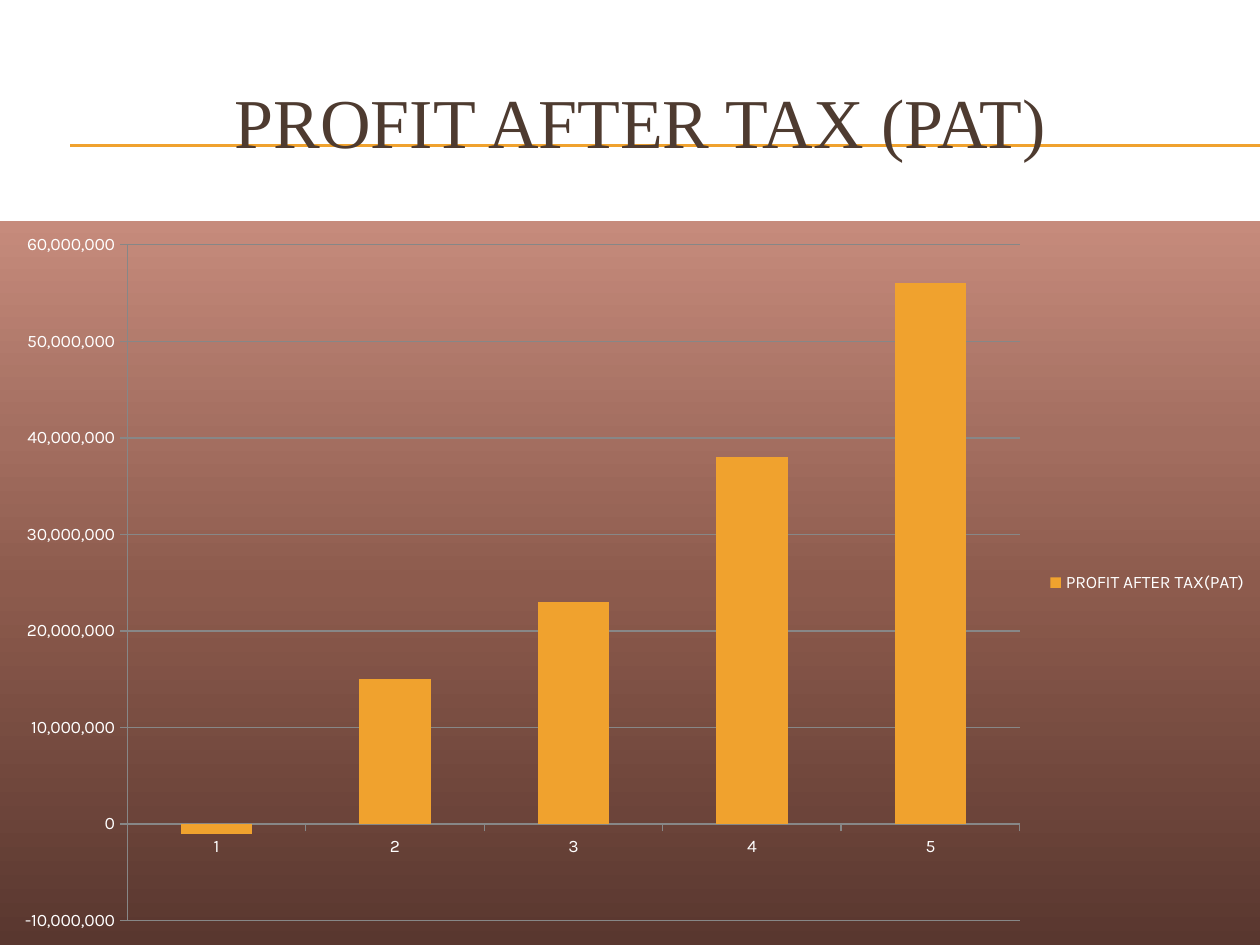
from lxml import etree
from pptx import Presentation
from pptx.chart.data import CategoryChartData
from pptx.dml.color import RGBColor
from pptx.enum.chart import XL_CHART_TYPE as ChartType
from pptx.enum.chart import XL_LEGEND_POSITION as LegendPosition
from pptx.enum.chart import XL_TICK_MARK as TickMark
from pptx.enum.shapes import MSO_CONNECTOR as Connector
from pptx.enum.text import MSO_ANCHOR as Anchor
from pptx.enum.text import PP_ALIGN as Align
from pptx.oxml import parse_xml
from pptx.oxml.ns import qn
from pptx.util import Pt

GOLD = RGBColor(0xF0, 0xA2, 0x2E)
BROWN = RGBColor(0x4E, 0x3B, 0x30)
WHITE = RGBColor(0xFF, 0xFF, 0xFF)
GRAY = RGBColor(0x87, 0x87, 0x87)
# Position in percent and colour, from the bottom of the chart to its top
GRADIENT = [
    (0, RGBColor(0x59, 0x37, 0x2F)),
    (50, RGBColor(0x8D, 0x5B, 0x4D)),
    (70, RGBColor(0xA3, 0x6E, 0x60)),
    (100, RGBColor(0xC6, 0x8B, 0x7C)),
]
SLIDE_WIDTH, SLIDE_HEIGHT = 720, 540


def apply_format(target, values):
    for name, value in values.items():
        setattr(target, name, value)


class SlideBuilder:
    title_font = {"name": "Times New Roman", "size": Pt(40)}
    chart_font = {"name": "Karla", "size": Pt(10)}

    def __init__(self, slide):
        self.slide = slide

    def rule(self, left, right, top):
        line = self.slide.shapes.add_connector(
            Connector.STRAIGHT, Pt(left), Pt(top), Pt(right), Pt(top))
        line.line.color.rgb = GOLD
        line.line.width = Pt(0.75)
        etree.SubElement(line._element.spPr, qn("a:effectLst"))

    def title(self, text, left, top, width, height):
        box = self.slide.shapes.add_textbox(
            Pt(left), Pt(top), Pt(width), Pt(height))
        apply_format(box.text_frame, {
            "word_wrap": True, "vertical_anchor": Anchor.MIDDLE})
        paragraph = box.text_frame.paragraphs[0]
        paragraph.alignment = Align.CENTER
        run = paragraph.add_run()
        run.text = text
        apply_format(run.font, self.title_font)
        run.font.color.rgb = BROWN

    def column_chart(self, name, values, left, top, width, height):
        data = CategoryChartData(number_format="#,##0")
        data.categories = [str(i) for i in range(1, len(values) + 1)]
        data.add_series(name, values)
        chart = self.slide.shapes.add_chart(
            ChartType.COLUMN_CLUSTERED, Pt(left), Pt(top), Pt(width),
            Pt(height), data).chart
        apply_format(chart, {"has_title": False, "has_legend": True})
        apply_format(chart.font, self.chart_font)
        chart.font.color.rgb = WHITE
        apply_format(chart.legend, {
            "position": LegendPosition.RIGHT, "include_in_layout": False})

        # Columns
        plot = chart.plots[0]
        apply_format(plot, {"gap_width": 150, "vary_by_categories": False})
        series = plot.series[0]
        series.invert_if_negative = False
        series.format.fill.solid()
        series.format.fill.fore_color.rgb = GOLD

        # Axes and gridlines
        value_axis = chart.value_axis
        apply_format(value_axis, {
            "minimum_scale": -10_000_000, "maximum_scale": 60_000_000,
            "major_unit": 10_000_000, "has_major_gridlines": True})
        apply_format(value_axis.tick_labels, {
            "number_format": "#,##0", "number_format_is_linked": False})
        for axis in (chart.category_axis, value_axis):
            axis.major_tick_mark = TickMark.OUTSIDE
            axis.format.line.color.rgb = GRAY
        value_axis.major_gridlines.format.line.color.rgb = GRAY
        self.gradient_background(chart)

    def gradient_background(self, chart):
        stops = "".join(
            f'<a:gs pos="{position * 1000}"><a:srgbClr val="{color}"/></a:gs>'
            for position, color in GRADIENT)
        properties = parse_xml(
            '<c:spPr'
            ' xmlns:c="http://schemas.openxmlformats.org/drawingml/2006/chart"'
            ' xmlns:a="http://schemas.openxmlformats.org/drawingml/2006/main">'
            f'<a:gradFill><a:gsLst>{stops}</a:gsLst>'
            '<a:lin ang="16200000" scaled="0"/></a:gradFill>'
            '<a:ln><a:noFill/></a:ln></c:spPr>')
        chart._chartSpace.find(qn("c:chart")).addnext(properties)


def main():
    presentation = Presentation()
    apply_format(presentation, {
        "slide_width": Pt(SLIDE_WIDTH), "slide_height": Pt(SLIDE_HEIGHT)})
    builder = SlideBuilder(
        presentation.slides.add_slide(presentation.slide_layouts[6]))

    # Double rule behind the title
    for top in (82.8, 83.5):
        builder.rule(40.3, SLIDE_WIDTH, top)

    # Title
    builder.title("PROFIT AFTER TAX (PAT)", 24, 36, 684, 66)

    # Profit chart
    profits = [-1_000_000, 15_000_000, 23_000_000, 38_000_000, 56_000_000]
    builder.column_chart(
        "PROFIT AFTER TAX(PAT)", profits, 0, 126, SLIDE_WIDTH, 414)

    presentation.save("out.pptx")


if __name__ == "__main__":
    main()
